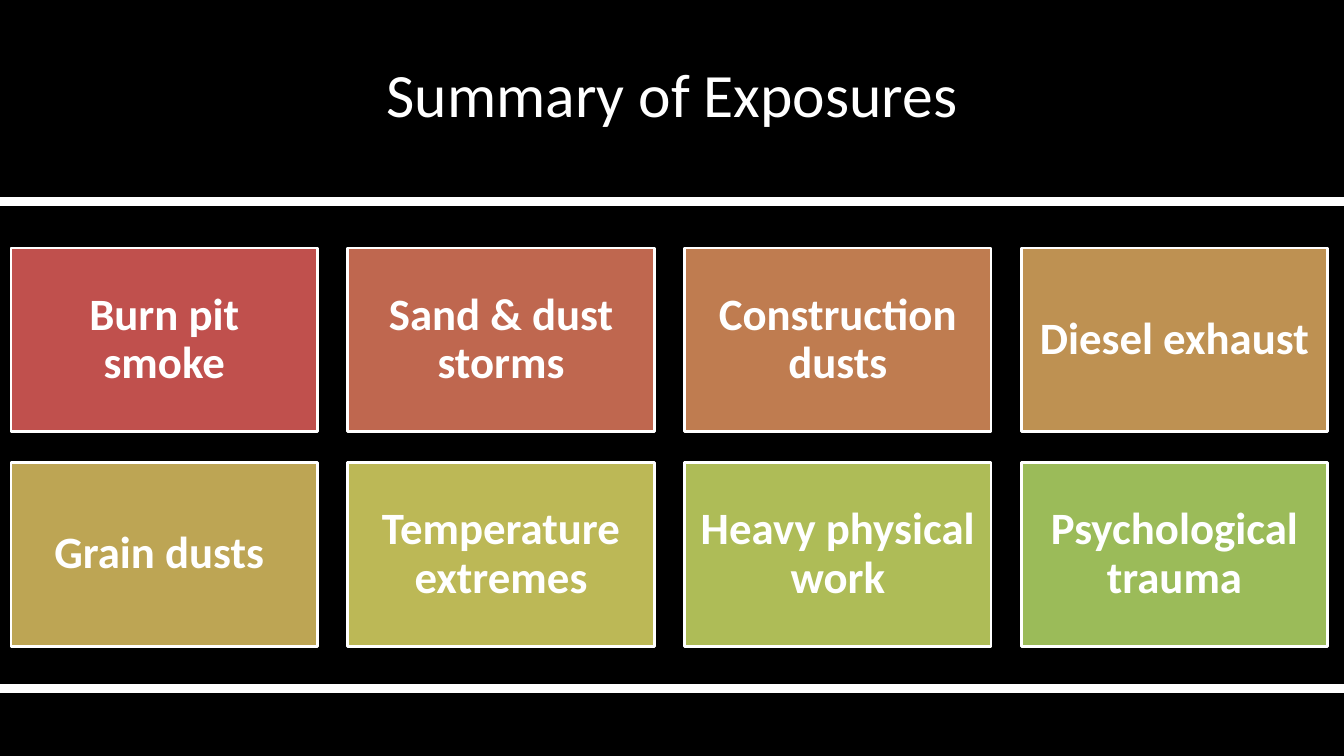
from dataclasses import dataclass

from lxml import etree
from pptx import Presentation
from pptx.dml.color import RGBColor
from pptx.enum import shapes, text
from pptx.oxml import ns
from pptx.slide import Slide
from pptx.text.text import TextFrame
from pptx.util import Inches, Pt


@dataclass(frozen=True)
class Theme:
    font: str = "Calibri"
    background: str = "000000"
    light: str = "FFFFFF"
    title_size: int = 44
    card_size: int = 32
    border: int = 2
    rule: int = 6


@dataclass(frozen=True)
class Exposure:
    label: str
    fill: str


THEME = Theme()
SLIDE_WIDTH, SLIDE_HEIGHT = 13.33, 7.5
COLUMNS = 4
GRID_LEFT, GRID_TOP = 0.11, 2.46
CARD_WIDTH, CARD_HEIGHT = 3.04, 1.82
PITCH_X, PITCH_Y = 3.34, 2.13
RULE_HEIGHTS = (2, 6.83)

EXPOSURES = (
    Exposure("Burn pit smoke", "C0504D"),
    Exposure("Sand & dust storms", "BF674F"),
    Exposure("Construction dusts", "BF7C50"),
    Exposure("Diesel exhaust", "BE9152"),
    Exposure("Grain dusts ", "BDA554"),
    Exposure("Temperature extremes", "BCB856"),
    Exposure("Heavy physical work", "AEBC57"),
    Exposure("Psychological trauma", "9BBB59"),
)


def color(code: str) -> RGBColor:
    return RGBColor.from_string(code)


def write(frame: TextFrame, words: str, *, size: int, bold: bool = False,
          spacing: float = 1.0, inset_x: float = 0.1, inset_y: float = 0.05) -> None:
    frame.word_wrap = True
    frame.vertical_anchor = text.MSO_ANCHOR.MIDDLE
    frame.margin_left = frame.margin_right = Inches(inset_x)
    frame.margin_top = frame.margin_bottom = Inches(inset_y)
    paragraph = frame.paragraphs[0]
    paragraph.alignment = text.PP_ALIGN.CENTER
    paragraph.line_spacing = spacing
    run = paragraph.add_run()
    run.text = words
    run.font.name = THEME.font
    run.font.size = Pt(size)
    run.font.bold = bold
    run.font.color.rgb = color(THEME.light)


def draw_exposure(slide: Slide, exposure: Exposure, index: int) -> None:
    row, column = divmod(index, COLUMNS)
    card = slide.shapes.add_shape(
        shapes.MSO_SHAPE.RECTANGLE,
        Inches(GRID_LEFT + column * PITCH_X), Inches(GRID_TOP + row * PITCH_Y),
        Inches(CARD_WIDTH), Inches(CARD_HEIGHT))
    card.shadow.inherit = False
    card.fill.solid()
    card.fill.fore_color.rgb = color(exposure.fill)
    card.line.color.rgb = color(THEME.light)
    card.line.width = Pt(THEME.border)
    write(card.text_frame, exposure.label, size=THEME.card_size, bold=True,
          spacing=0.9, inset_x=0.13, inset_y=0.13)


def draw_rule(slide: Slide, height: float) -> None:
    rule = slide.shapes.add_connector(
        shapes.MSO_CONNECTOR.STRAIGHT,
        Inches(0), Inches(height), Inches(SLIDE_WIDTH), Inches(height))
    rule.line.color.rgb = color(THEME.light)
    rule.line.width = Pt(THEME.rule)
    etree.SubElement(rule._element.spPr, ns.qn("a:effectLst"))


def main() -> None:
    deck = Presentation()
    deck.slide_width = Inches(SLIDE_WIDTH)
    deck.slide_height = Inches(SLIDE_HEIGHT)
    slide = deck.slides.add_slide(deck.slide_layouts[6])
    slide.background.fill.solid()
    slide.background.fill.fore_color.rgb = color(THEME.background)

    heading = slide.shapes.add_textbox(Inches(0.67), Inches(0.3), Inches(12), Inches(1.25))
    write(heading.text_frame, "Summary of Exposures", size=THEME.title_size)
    for index, exposure in enumerate(EXPOSURES):
        draw_exposure(slide, exposure, index)
    for height in RULE_HEIGHTS:
        draw_rule(slide, height)

    deck.save("out.pptx")


if __name__ == "__main__":
    main()
